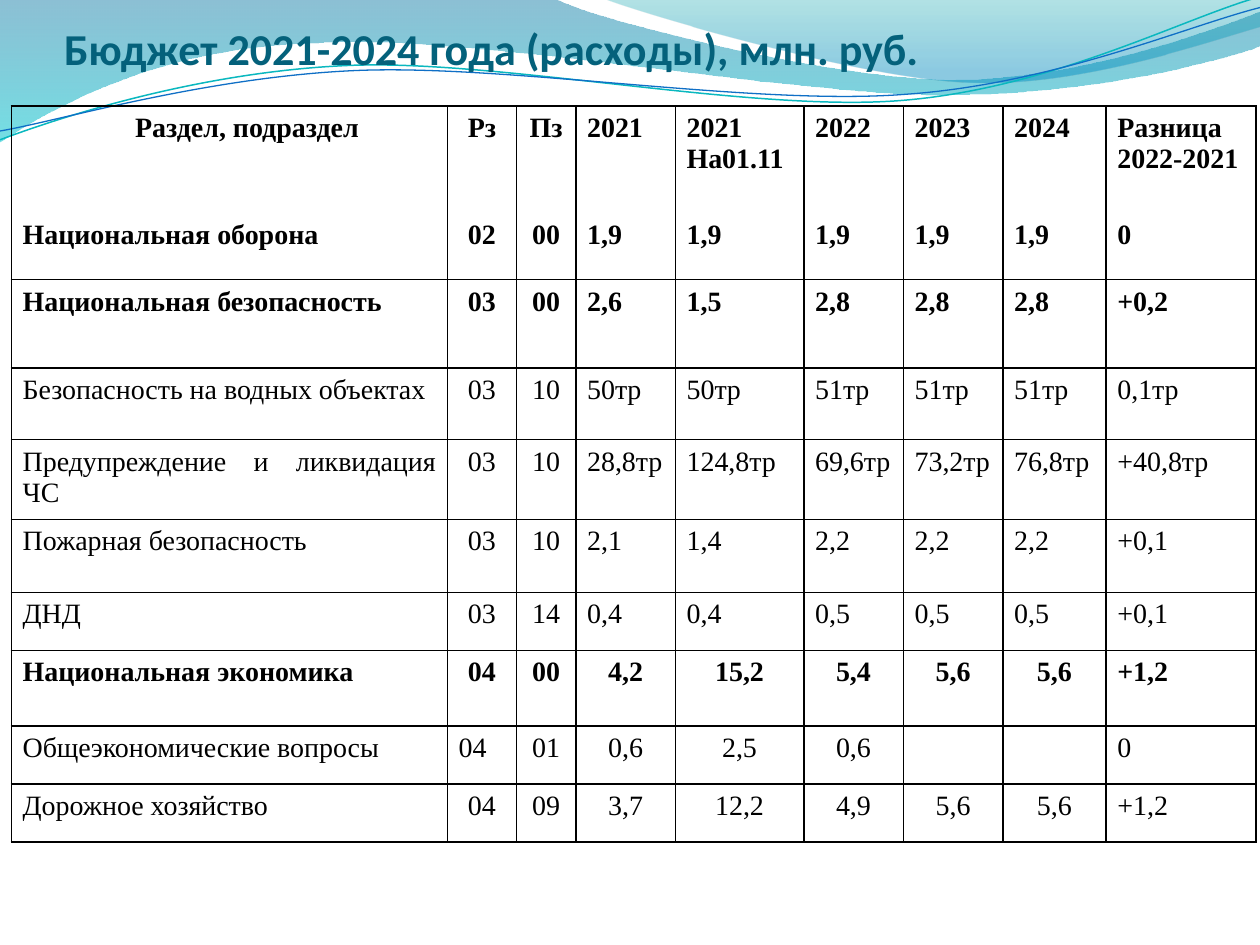
from lxml.etree import SubElement
from pptx import Presentation
from pptx.dml.color import RGBColor
from pptx.enum.text import MSO_ANCHOR as Anchor, PP_ALIGN as Align
from pptx.oxml.ns import qn
from pptx.util import Inches, Pt

BLACK = RGBColor(0x00, 0x00, 0x00)
TITLE_TEAL = RGBColor(0x04, 0x61, 0x7B)
DEEP_BLUE = RGBColor(0x00, 0x74, 0xA1)
TURQUOISE = RGBColor(0x00, 0xC6, 0xCF)
DARK_TURQUOISE = RGBColor(0x00, 0xA1, 0xA9)
SKY_BLUE = RGBColor(0x00, 0x8B, 0xBF)
LINE_TEAL = RGBColor(0x0A, 0xB8, 0xBF)
LINE_BLUE = RGBColor(0x0F, 0x6F, 0xC6)

LEFT_WAVE = [
    (0, 0), (4.4, -0.01), (4.76, 0.17, 6.64, 0.63, 7.58, 0.63),
    (8.53, 0.63, 9.58, 0.26, 10, 0.09), (10.01, 0.36),
    (9.83, 0.44, 8.7, 0.76, 7.46, 0.75), (6.22, 0.75, 3.82, 0.28, 2.57, 0.34),
    (1.29, 0.36, 0.46, 0.83, -0.01, 1.13), (0, 0),
]
RIGHT_WAVE = [
    (4.79, -0.01), (5.09, 0.11, 6.82, 0.62, 7.69, 0.65),
    (8.56, 0.69, 9.61, 0.32, 10, 0.21), (10, 0), (4.79, -0.01),
]
TEAL_CURVE = [
    (0, 1.11), (0.48, 0.93, 1.58, 0.57, 2.77, 0.52),
    (3.95, 0.47, 5.93, 0.89, 7.13, 0.8), (8.33, 0.71, 9.38, 0.15, 9.98, -0.02),
]
BLUE_CURVE = [
    (0, 1.04), (0.47, 0.96, 1.64, 0.61, 2.83, 0.56),
    (4.03, 0.51, 5.97, 0.84, 7.17, 0.75), (8.36, 0.67, 9.41, 0.21, 10, 0.06),
]

COLUMN_WIDTHS = [3.46, 0.55, 0.47, 0.79, 1.02, 0.79, 0.79, 0.82, 1.19]
ROW_HEIGHTS = [0.85, 0.53, 0.7, 0.57, 0.58, 0.58, 0.46, 0.6, 0.46, 0.46]
BUDGET_ROWS = [
    ["Раздел, подраздел", "Рз", "Пз", "2021", "2021\nНа01.11", "2022", "2023", "2024",
     "Разница 2022-2021"],
    ["Национальная оборона", "02", "00", "1,9", "1,9", "1,9", "1,9", "1,9", "0"],
    ["Национальная безопасность", "03", "00", "2,6", "1,5", "2,8", "2,8", "2,8", "+0,2"],
    ["Безопасность на водных объектах", "03", "10", "50тр", "50тр", "51тр", "51тр", "51тр",
     "0,1тр"],
    ["Предупреждение и ликвидация ЧС", "03", "10", "28,8тр", "124,8тр", "69,6тр", "73,2тр",
     "76,8тр", "+40,8тр"],
    ["Пожарная безопасность", "03", "10", "2,1", "1,4", "2,2", "2,2", "2,2", "+0,1"],
    ["ДНД", "03", "14", "0,4", "0,4", "0,5", "0,5", "0,5", "+0,1"],
    ["Национальная экономика", "04", "00", "4,2", "15,2", "5,4", "5,6", "5,6", "+1,2"],
    ["Общеэкономические вопросы", "04", "01", "0,6", "2,5", "0,6", "", "", "0"],
    ["Дорожное хозяйство", "04", "09", "3,7", "12,2", "4,9", "5,6", "5,6", "+1,2"],
]
BOLD_ROWS = {0, 1, 2, 7}
ECONOMY_ROW = 7
GENERAL_ECONOMY_ROW = 8


def write_text(frame, text, *, font, size, color, bold=False, align=Align.LEFT):
    for index, line in enumerate(text.split("\n")):
        paragraph = frame.add_paragraph() if index else frame.paragraphs[0]
        paragraph.alignment = align
        run = paragraph.add_run()
        run.text = line
        run.font.name = font
        run.font.size = Pt(size)
        run.font.bold = bold
        run.font.color.rgb = color
        SubElement(paragraph._p, qn("a:endParaRPr"), sz=str(round(size * 100)))


def add_outline(slide, segments, closed):
    points = [pair for segment in segments for pair in zip(segment[::2], segment[1::2])]
    corners = [(Inches(x), Inches(y)) for x, y in points]
    builder = slide.shapes.build_freeform(*corners[0])
    builder.add_line_segments(corners[1:], close=closed)
    shape = builder.convert_to_shape()
    shape.shadow.inherit = False
    straight_lines = iter(list(shape._element.iter(qn("a:lnTo"))))
    for segment in segments[1:]:
        first = next(straight_lines)
        if len(segment) == 6:
            first.tag = qn("a:cubicBezTo")
            for _ in range(2):
                following = next(straight_lines)
                first.append(following[0])
                following.getparent().remove(following)
    return shape


def add_wave(slide, segments, stops):
    shape = add_outline(slide, segments, True)
    shape.line.fill.background()
    shape.fill.gradient()
    shape.fill.gradient_angle = 270
    for stop, (position, color, _) in zip(shape.fill.gradient_stops, stops):
        stop.position = position
        stop.color.rgb = color
    gradient_colors = shape._element.spPr.iter(qn("a:srgbClr"))
    for color_element, (_, _, opacity) in zip(gradient_colors, stops):
        SubElement(color_element, qn("a:alpha")).set("val", str(opacity * 1000))


def add_curve(slide, segments, color, width):
    shape = add_outline(slide, segments, False)
    shape.fill.background()
    shape.line.color.rgb = color
    shape.line.width = Pt(width)


def add_title(slide, text):
    box = slide.shapes.add_textbox(Inches(0.51), Inches(0.13), Inches(9), Inches(0.46))
    frame = box.text_frame
    frame.word_wrap = True
    frame.vertical_anchor = Anchor.BOTTOM
    frame.margin_left = frame.margin_right = frame.margin_bottom = 0
    frame.margin_top = Inches(0.05)
    write_text(frame, text, font="Calibri", size=25.2, color=TITLE_TEAL, bold=True)


def set_borders(cell, hidden):
    properties = cell._tc.get_or_add_tcPr()
    for side in ("lnL", "lnR", "lnT", "lnB"):
        line = SubElement(properties, qn(f"a:{side}"), w=str(Pt(1)))
        if side == hidden:
            SubElement(line, qn("a:noFill"))
        else:
            fill = SubElement(line, qn("a:solidFill"))
            SubElement(fill, qn("a:srgbClr"), val=str(BLACK))


def cell_alignment(row, column):
    if column == 0:
        return Align.JUSTIFY if row else Align.CENTER
    if (row, column) == (GENERAL_ECONOMY_ROW, 1):
        return Align.LEFT
    if column < 3 or (row >= ECONOMY_ROW and column < 8):
        return Align.CENTER
    return Align.LEFT


def add_budget_table(slide):
    frame = slide.shapes.add_table(
        len(ROW_HEIGHTS), len(COLUMN_WIDTHS), Inches(0.09), Inches(0.84),
        Inches(sum(COLUMN_WIDTHS)), Inches(sum(ROW_HEIGHTS)))
    table = frame.table
    table.first_row = table.horz_banding = False
    for column, width in zip(table.columns, COLUMN_WIDTHS):
        column.width = Inches(width)
    for row, height in zip(table.rows, ROW_HEIGHTS):
        row.height = Inches(height)
    for row, texts in enumerate(BUDGET_ROWS):
        for column, text in enumerate(texts):
            cell = table.cell(row, column)
            cell.margin_left = cell.margin_right = Inches(0.09)
            cell.margin_top = cell.margin_bottom = Inches(0.05)
            set_borders(cell, {0: "lnB", 1: "lnT"}.get(row))
            cell.fill.background()
            if text:
                write_text(cell.text_frame, text, font="Times New Roman", size=16,
                           color=BLACK, bold=row in BOLD_ROWS,
                           align=cell_alignment(row, column))
    table.cell(0, 0).margin_left = Inches(0.37)


def main():
    presentation = Presentation()
    presentation.slide_width = Inches(10)
    presentation.slide_height = Inches(7.5)
    slide = presentation.slides.add_slide(presentation.slide_layouts[6])
    add_wave(slide, LEFT_WAVE, [(0, DEEP_BLUE, 45), (1, TURQUOISE, 55)])
    add_wave(slide, RIGHT_WAVE, [(0, DARK_TURQUOISE, 30), (0.8, SKY_BLUE, 45)])
    add_curve(slide, TEAL_CURVE, LINE_TEAL, 0.85)
    add_curve(slide, BLUE_CURVE, LINE_BLUE, 0.75)
    add_title(slide, "Бюджет 2021-2024 года (расходы), млн. руб.")
    add_budget_table(slide)
    presentation.save("out.pptx")


if __name__ == "__main__":
    main()
